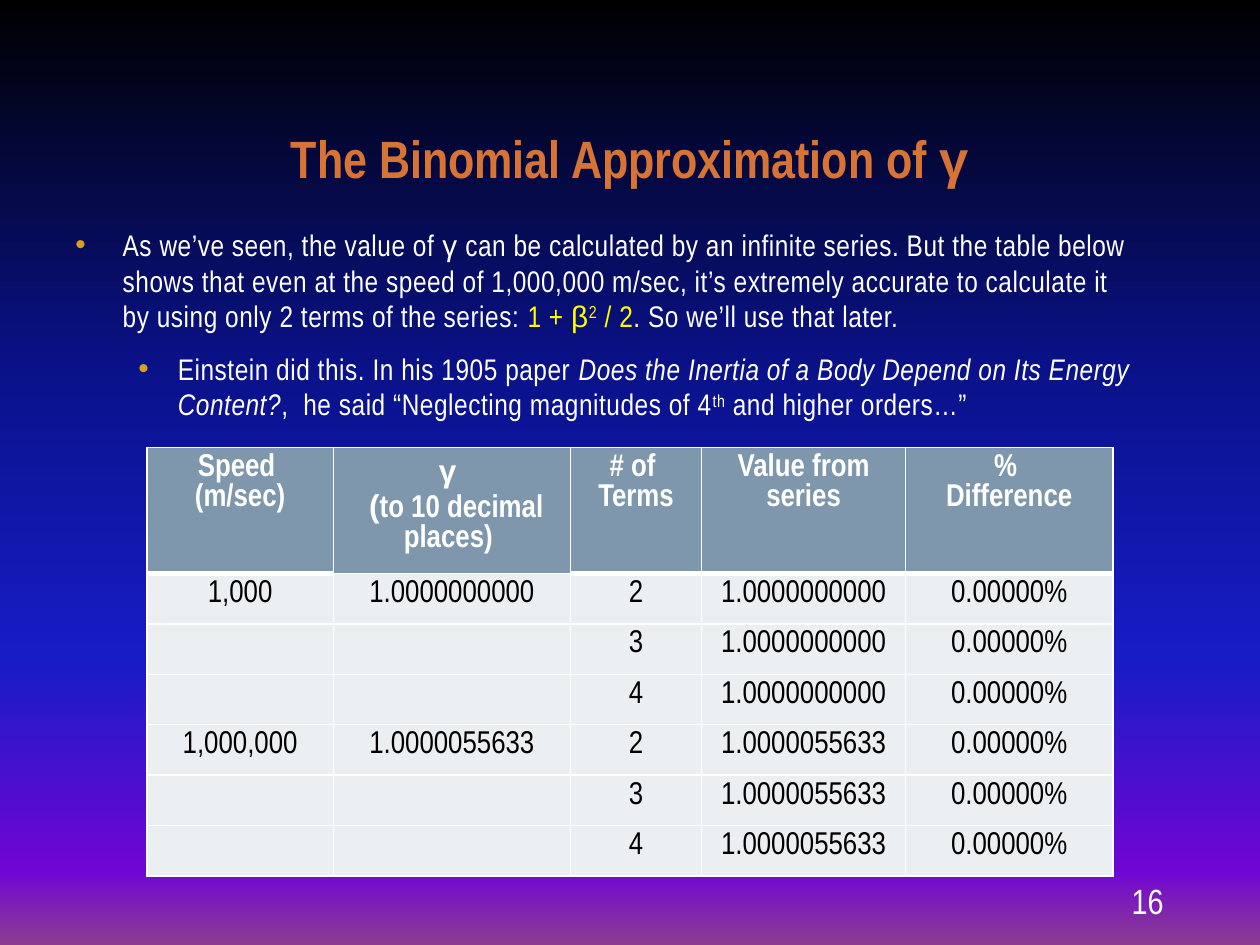
from lxml.etree import SubElement
from pptx import Presentation
from pptx.dml.color import RGBColor
from pptx.enum.text import MSO_ANCHOR as Anchor, PP_ALIGN as Align
from pptx.oxml.ns import qn
from pptx.util import Pt

SANS, GREEK = "Arial Narrow", "Arial"
WHITE, YELLOW, ORANGE, BULLET = "FFFFFF", "FFFF00", "D77435", "DC9E1F"
HEADER_FILL, BODY_FILL = "7E97AD", "ECEFF1"
BACKGROUND = [(0, "000000"), (40, "0A128C"), (70, "181CC7"), (92, "7005D4"), (100, "8C3D91")]

# Each run is (text, options); each paragraph is a list of runs.
TITLE = [("The Binomial Approximation of ", {}), ("γ", {"font": GREEK})]
NUMBER = [("16", {})]
BULLETS = [
    [("As we’ve seen, the value of ", {}),
     ("γ", {"font": GREEK}),
     (" can be calculated by an infinite series. But the table below shows that even at "
      "the speed of 1,000,000 m/sec, it’s extremely accurate to calculate it by using "
      "only 2 terms of the series: ", {}),
     ("1 + ", {"color": YELLOW}),
     ("β", {"color": YELLOW, "font": GREEK}),
     ("2", {"color": YELLOW, "raised": True}),
     (" / 2", {"color": YELLOW}),
     (". So we’ll use that later.", {})],
    [("Einstein did this. In his 1905 paper ", {}),
     ("Does the Inertia of a Body Depend on Its Energy Content?", {"italic": True}),
     (",  he said “Neglecting magnitudes of 4", {}),
     ("th", {"raised": True}),
     (" and higher orders…”", {})],
]
INDENTS = [(27, 27), (58.5, 22.5)]  # text margin, hanging part

HEADERS = [
    [[("Speed ", {})], [("(m/sec)", {})]],
    [[("γ ", {"font": GREEK})], [(" (", {"font": GREEK}), ("to 10 decimal places) ", {})]],
    [[("# of ", {})], [("Terms", {})]],
    [[("Value from series", {})]],
    [[("% ", {})], [("Difference", {})]],
]
GAMMAS = [("1,000", "1.0000000000"), ("1,000,000", "1.0000055633")]
TERMS = ["2", "3", "4"]
DIFFERENCE = "0.00000%"
COLUMN_WIDTHS = [106.5, 135.5, 75, 116.5, 118.5]
HEADER_HEIGHT, ROW_HEIGHT = 64, 24.2
GAMMA_COLUMN = 1


def rgb(value):
    return RGBColor.from_string(value)


def write(para, runs, size, color, bold=False, align=Align.LEFT, spacing=None):
    para.alignment = align
    font = para.font
    font.name, font.size, font.bold = SANS, Pt(size), bold
    font.color.rgb = rgb(color)
    for text, options in runs:
        span = para.add_run()
        span.text = text
        if "font" in options:
            span.font.name = options["font"]
        if "color" in options:
            span.font.color.rgb = rgb(options["color"])
        if options.get("italic"):
            span.font.italic = True
        properties = span._r.get_or_add_rPr()
        if options.get("raised"):
            properties.set("baseline", "30000")
        if spacing:
            properties.set("spc", str(round(spacing * 100)))


def keep_low(para):
    """Stop an empty paragraph from stretching its table row."""
    ending = SubElement(para._p, qn("a:endParaRPr"), sz="1200")
    SubElement(ending, qn("a:latin"), typeface=SANS)


def add_box(page, left, top, width, height, anchor):
    box = page.shapes.add_textbox(Pt(left), Pt(top), Pt(width), Pt(height))
    box.text_frame.word_wrap = True
    box.text_frame.vertical_anchor = anchor
    return box.text_frame


def add_bullet(para, margin, hanging):
    properties = para._p.get_or_add_pPr()
    properties.set("marL", str(Pt(margin)))
    properties.set("indent", str(-Pt(hanging)))
    color = SubElement(properties, qn("a:buClr"))
    SubElement(color, qn("a:srgbClr"), val=BULLET)
    SubElement(properties, qn("a:buFont"), typeface="Arial")
    SubElement(properties, qn("a:buChar"), char="•")


def paint_background(page):
    fill = page.background.fill
    fill.gradient()
    fill.gradient_angle = 270
    stops = next(page.element.iter(qn("a:gsLst")))
    for stop in list(stops):
        stops.remove(stop)
    for percent, color in BACKGROUND:
        stop = SubElement(stops, qn("a:gs"), pos=str(percent * 1000))
        SubElement(stop, qn("a:srgbClr"), val=color)


def style_cell(cell, fill, top, bottom):
    """Draw white borders, with the given top and bottom widths, and fill the cell."""
    properties = cell._tc.get_or_add_tcPr()
    for side, width in (("L", 1), ("R", 1), ("T", top), ("B", bottom)):
        line = SubElement(properties, qn(f"a:ln{side}"), w=str(Pt(width)))
        solid = SubElement(line, qn("a:solidFill"))
        SubElement(solid, qn("a:srgbClr"), val=WHITE)
    cell.fill.solid()
    cell.fill.fore_color.rgb = rgb(fill)


def add_gamma_table(page):
    rows = [HEADERS]
    for speed, gamma in GAMMAS:
        for index, term in enumerate(TERMS):
            lead = [speed, gamma] if index == 0 else ["", ""]
            values = lead + [term, gamma, DIFFERENCE]
            rows.append([[[(value, {})] if value else []] for value in values])

    heights = [HEADER_HEIGHT] + [ROW_HEIGHT] * (len(rows) - 1)
    table = page.shapes.add_table(len(rows), len(COLUMN_WIDTHS), Pt(84), Pt(255.6),
                                  Pt(sum(COLUMN_WIDTHS)), Pt(sum(heights))).table
    for column, width in zip(table.columns, COLUMN_WIDTHS):
        column.width = Pt(width)
    for row_index, (cells, height) in enumerate(zip(rows, heights)):
        table.rows[row_index].height = Pt(height)
        header = row_index == 0
        for column_index, paragraphs in enumerate(cells):
            cell = table.cell(row_index, column_index)
            rule = 1 if column_index == GAMMA_COLUMN else 3
            style_cell(cell, HEADER_FILL if header else BODY_FILL,
                       top=rule if row_index == 1 else 1, bottom=rule if header else 1)
            for index, runs in enumerate(paragraphs):
                frame = cell.text_frame
                para = frame.add_paragraph() if index else frame.paragraphs[0]
                if runs:
                    write(para, runs, 18, WHITE if header else "000000", header, Align.CENTER)
                else:
                    keep_low(para)


def main():
    deck = Presentation()
    deck.slide_width, deck.slide_height = Pt(720), Pt(540)
    page = deck.slides.add_slide(deck.slide_layouts[6])
    paint_background(page)

    title = add_box(page, 48, 21.6, 624, 90, Anchor.BOTTOM)
    write(title.paragraphs[0], TITLE, 30, ORANGE, True, Align.CENTER)

    number = add_box(page, 594, 500.4, 78, 28.8, Anchor.MIDDLE)
    write(number.paragraphs[0], NUMBER, 20, WHITE, align=Align.RIGHT)

    body = add_box(page, 36, 126, 624, 356.4, Anchor.TOP)
    for index, (runs, indent) in enumerate(zip(BULLETS, INDENTS)):
        para = body.add_paragraph() if index else body.paragraphs[0]
        add_bullet(para, *indent)
        para.level = index
        para.space_before, para.space_after = Pt(3.5 if index else 0), Pt(6)
        write(para, runs, 17, WHITE, spacing=0.3)

    add_gamma_table(page)
    deck.save("out.pptx")


if __name__ == "__main__":
    main()
